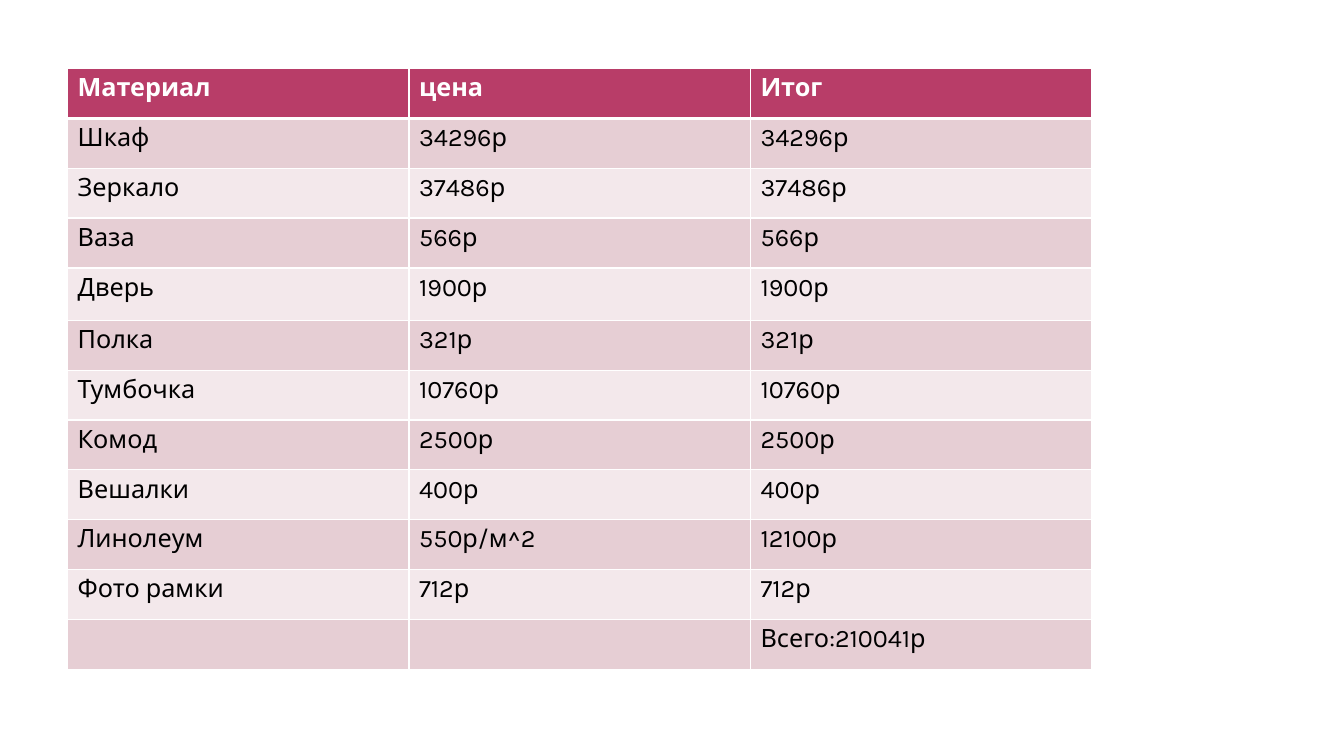
"""Builds a slide with the price table of the furnishing materials."""
import lxml.etree
import pptx
import pptx.dml.color
import pptx.oxml.ns
import pptx.util

THEME = {
    "font": "Karla",
    "size": 18,
    "header": "B83D68",
    "bands": ("F3E8EB", "E6CED4"),
    "header_text": "FFFFFF",
    "body_text": "000000",
    "border": "FFFFFF",
    "thin": 1,
    "thick": 3,
}
ROWS = [
    ("Материал", "цена", "Итог"),
    ("Шкаф", "34296р", "34296р"),
    ("Зеркало", "37486р", "37486р"),
    ("Ваза", "566р", "566р"),
    ("Дверь", "1900р", "1900р"),
    ("Полка", "321р", "321р"),
    ("Тумбочка", "10760р", "10760р"),
    ("Комод", "2500р", "2500р"),
    ("Вешалки", "400р", "400р"),
    ("Линолеум", "550р/м^2", "12100р"),
    ("Фото рамки", "712р", "712р"),
    ("", "", "Всего:210041р"),
]
TABLE_LEFT, TABLE_TOP, TABLE_WIDTH, TABLE_HEIGHT = 0.67, 0.68, 10.16, 5.96
TALL_ROW, TALL_HEIGHT = 4, 0.52


def color(name):
    return pptx.dml.color.RGBColor.from_string(name)


def add_border(cell, side, width):
    qn = pptx.oxml.ns.qn
    line = lxml.etree.SubElement(cell._tc.get_or_add_tcPr(), qn(f"a:ln{side}"))
    line.set("w", str(pptx.util.Pt(width)))
    fill = lxml.etree.SubElement(line, qn("a:solidFill"))
    lxml.etree.SubElement(fill, qn("a:srgbClr")).set("val", THEME["border"])


deck = pptx.Presentation()
deck.slide_width = pptx.util.Inches(13.33)
deck.slide_height = pptx.util.Inches(7.5)
page = deck.slides.add_slide(deck.slide_layouts[6])

frame = [pptx.util.Inches(n) for n in (TABLE_LEFT, TABLE_TOP, TABLE_WIDTH, TABLE_HEIGHT)]
table = page.shapes.add_table(len(ROWS), len(ROWS[0]), *frame).table
row_height = (TABLE_HEIGHT - TALL_HEIGHT) / (len(ROWS) - 1)

for row_index, texts in enumerate(ROWS):
    is_header = row_index == 0
    height = TALL_HEIGHT if row_index == TALL_ROW else row_height
    table.rows[row_index].height = pptx.util.Inches(height)
    fill_color = THEME["header"] if is_header else THEME["bands"][row_index % 2]
    text_color = THEME["header_text"] if is_header else THEME["body_text"]
    for column_index, text in enumerate(texts):
        cell = table.cell(row_index, column_index)
        for side in "LRTB":
            below_header = (row_index, side) in ((0, "B"), (1, "T"))
            add_border(cell, side, THEME["thick"] if below_header else THEME["thin"])
        cell.fill.solid()
        cell.fill.fore_color.rgb = color(fill_color)
        cell.text = text
        font = cell.text_frame.paragraphs[0].font
        font.name = THEME["font"]
        font.size = pptx.util.Pt(THEME["size"])
        font.bold = is_header
        font.color.rgb = color(text_color)

deck.save("out.pptx")
